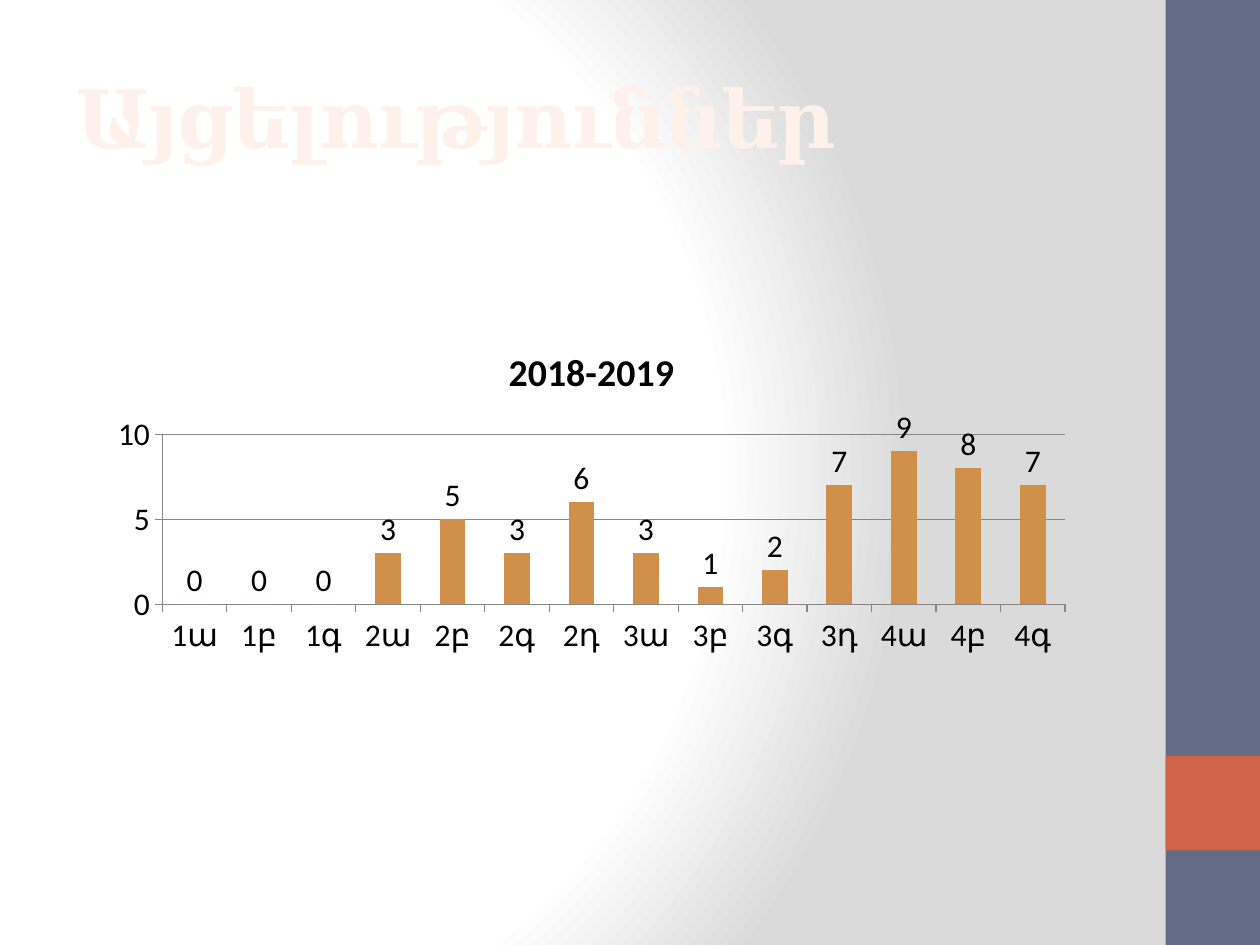
from lxml import etree
from pptx import Presentation
from pptx.chart.data import CategoryChartData
from pptx.dml.color import RGBColor
from pptx.enum import chart as charts, shapes, text
from pptx.oxml import parse_xml
from pptx.oxml.ns import nsdecls, qn
from pptx.util import Inches, Pt

VISITS = {
    "1ա": 0, "1բ": 0, "1գ": 0,
    "2ա": 3, "2բ": 5, "2գ": 3, "2դ": 6,
    "3ա": 3, "3բ": 1, "3գ": 2, "3դ": 7,
    "4ա": 9, "4բ": 8, "4գ": 7,
}


def color(value):
    return RGBColor.from_string(value)


def style_font(font, **values):
    for name, value in values.items():
        if name == "color":
            font.color.rgb = color(value)
        else:
            setattr(font, name, value)


def set_background(page, stops, focus):
    """Radial gradient; focus gives the left, top, right, bottom insets in percent."""
    stop_xml = "".join(
        f'<a:gs pos="{place * 1000}"><a:srgbClr val="{value}"/></a:gs>'
        for place, value in stops
    )
    sides = " ".join(f'{side}="{inset * 1000}"' for side, inset in zip("ltrb", focus))
    background = parse_xml(
        f'<p:bg {nsdecls("p", "a")}><p:bgPr><a:gradFill rotWithShape="1">'
        f'<a:gsLst>{stop_xml}</a:gsLst>'
        f'<a:path path="circle"><a:fillToRect {sides}/></a:path>'
        '</a:gradFill><a:effectLst/></p:bgPr></p:bg>'
    )
    page.element.find(qn("p:cSld")).insert(0, background)


def add_block(page, left, top, width, height, fill):
    block = page.shapes.add_shape(
        shapes.MSO_SHAPE.RECTANGLE, *map(Inches, (left, top, width, height)))
    block.shadow.inherit = False
    block.fill.solid()
    block.fill.fore_color.rgb = color(fill)
    block.line.fill.background()


def outline_text(span, width, value):
    line = etree.Element(qn("a:ln"), w=str(Pt(width)))
    fill = etree.SubElement(line, qn("a:solidFill"))
    etree.SubElement(fill, qn("a:srgbClr"), val=value)
    span.font._element.insert(0, line)


def add_title(page, words):
    box = page.shapes.add_textbox(*map(Inches, (0.5, 0.3, 8.33, 1.25)))
    frame = box.text_frame
    frame.word_wrap = True
    frame.vertical_anchor = text.MSO_ANCHOR.MIDDLE
    span = frame.paragraphs[0].add_run()
    span.text = words
    style_font(span.font, name="Cambria", size=Pt(46), bold=True, color="FEF1EA")
    span.font._element.set("spc", "-100")
    outline_text(span, 2.48, "C86D09")


def style_line(line, value="868686"):
    line.color.rgb = color(value)
    line.width = Pt(0.75)


def add_visits_chart(page, name, visits):
    data = CategoryChartData()
    data.categories = list(visits)
    data.add_series(name, list(visits.values()))
    chart = page.shapes.add_chart(
        charts.XL_CHART_TYPE.COLUMN_CLUSTERED,
        *map(Inches, (0.78, 2.58, 7.83, 2.67)), data).chart
    style_font(chart.font, name="Calibri", size=Pt(18), color="000000")
    chart.has_legend = False

    chart.has_title = True
    chart.chart_title.include_in_layout = False
    heading = chart.chart_title.text_frame
    heading.text = name
    style_font(heading.paragraphs[0].runs[0].font,
               name="Calibri", size=Pt(21.6), bold=True, color="000000")

    for axis in (chart.category_axis, chart.value_axis):
        axis.major_tick_mark = charts.XL_TICK_MARK.OUTSIDE
        axis.minor_tick_mark = charts.XL_TICK_MARK.NONE
        style_line(axis.format.line)
    scale = chart.value_axis
    scale.minimum_scale, scale.maximum_scale, scale.major_unit = 0, 10, 5
    scale.has_major_gridlines = True
    style_line(scale.major_gridlines.format.line)

    plot = chart.plots[0]
    plot.gap_width = 150
    plot.vary_by_categories = False
    bars = plot.series[0].format.fill
    bars.solid()
    bars.fore_color.rgb = color("D19049")
    plot.has_data_labels = True
    plot.data_labels.show_value = True
    plot.data_labels.position = charts.XL_LABEL_POSITION.OUTSIDE_END


def main():
    deck = Presentation()
    deck.slide_width, deck.slide_height = Inches(10), Inches(7.5)
    page = deck.slides.add_slide(deck.slide_layouts[6])
    set_background(page, [(0, "FFFFFF"), (75, "FFFFFF"), (100, "DADADA")],
                   (20, 50, 100, 50))
    add_block(page, 9.25, 0, 0.75, 7.5, "646B86")
    add_block(page, 9.25, 6, 0.75, 0.75, "D16349")
    add_title(page, "Այցելություններ")
    add_visits_chart(page, "2018-2019", VISITS)
    deck.save("out.pptx")


if __name__ == "__main__":
    main()
